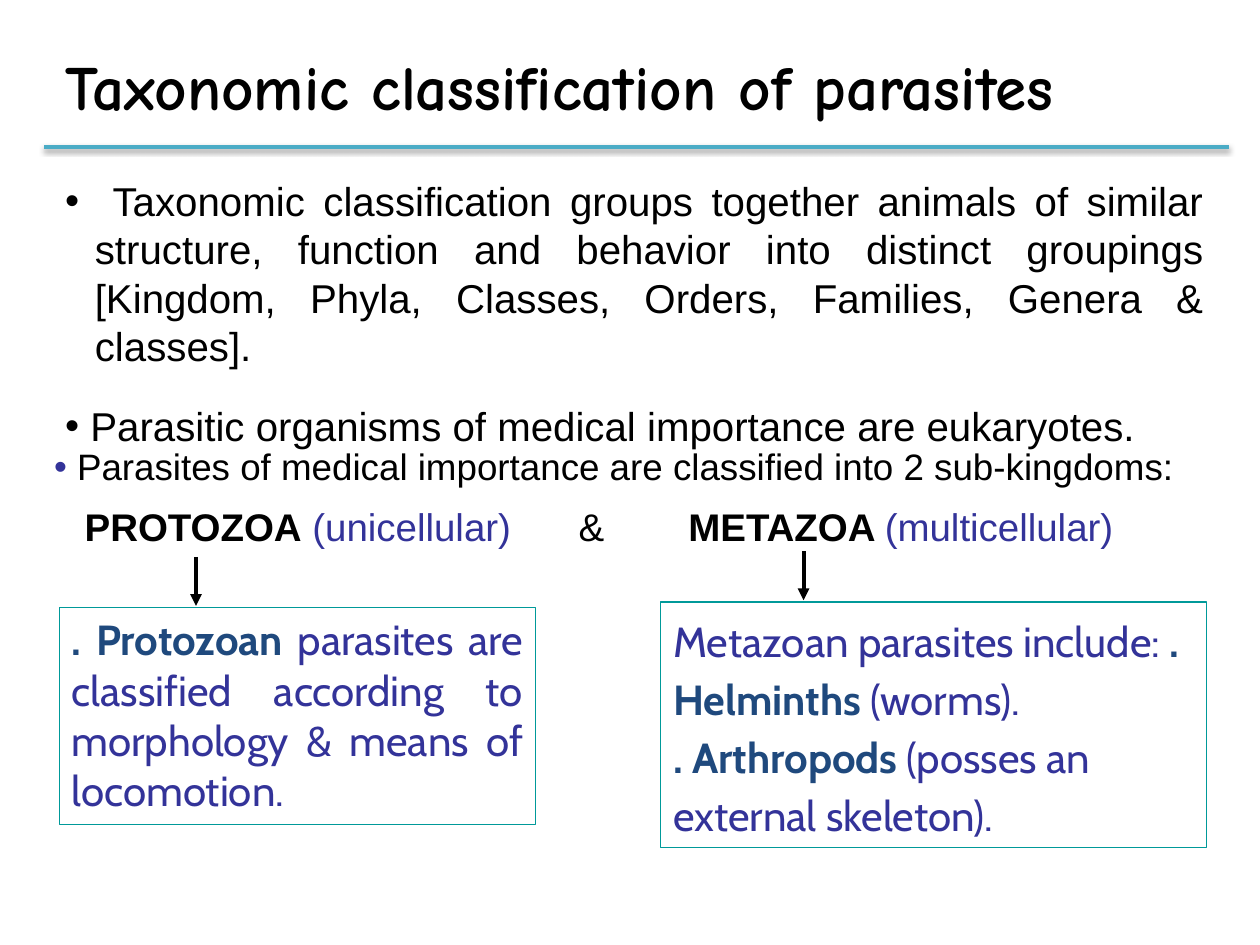
"""Build the slide on the taxonomic classification of parasites."""
import dataclasses
import typing

import pptx
import pptx.dml.color
import pptx.enum.shapes
import pptx.enum.text
import pptx.oxml
import pptx.oxml.ns
import pptx.util

Pt = pptx.util.Pt
RGBColor = pptx.dml.color.RGBColor
Align = pptx.enum.text.PP_ALIGN

BLACK = RGBColor(0x00, 0x00, 0x00)
INDIGO = RGBColor(0x33, 0x33, 0x99)
NAVY = RGBColor(0x1F, 0x49, 0x7D)
TEAL = RGBColor(0x00, 0x99, 0x99)
SKY = RGBColor(0x4B, 0xAC, 0xC6)
NAMESPACE = pptx.oxml.ns.nsdecls("a")


class Run(typing.NamedTuple):
    text: str
    color: RGBColor = BLACK
    bold: bool = False


class Heading(typing.NamedTuple):
    left: float
    width: float
    runs: list[Run]


@dataclasses.dataclass
class Branch:
    left: float
    top: float
    width: float
    height: float
    arrow_x: float
    paragraphs: list[list[Run]]
    alignment: Align
    line_spacing: float


HEADINGS = [
    Heading(41.3, 270, [Run("PROTOZOA", bold=True), Run(" (unicellular)", INDIGO)]),
    Heading(323.5, 40, [Run("&")]),
    Heading(386.3, 270, [Run("METAZOA ", bold=True), Run("(multicellular)", INDIGO)]),
]

BRANCHES = [
    Branch(33.84, 347.2, 272.16, 123.84, 112, [[
        Run(". Protozoan ", NAVY, True),
        Run("parasites are classified according to morphology & means of locomotion.", INDIGO),
    ]], Align.JUSTIFY, 1),
    Branch(377.6, 344, 311.75, 140.4, 459.2, [
        [Run("Metazoan parasites include: ", INDIGO), Run(". Helminths ", NAVY, True),
         Run("(worms).", INDIGO)],
        [Run(". Arthropods ", NAVY, True), Run("(posses an external skeleton).", INDIGO)],
    ], Align.LEFT, 1.15),
]


def add_xml(parent, markup: str) -> None:
    tag, rest = markup.split(maxsplit=1)
    parent.append(pptx.oxml.parse_xml(f"{tag} {NAMESPACE} {rest}"))


def prepare_frame(shape) -> typing.Any:
    frame = shape.text_frame
    frame.word_wrap = True
    frame.auto_size = pptx.enum.text.MSO_AUTO_SIZE.NONE
    frame.vertical_anchor = pptx.enum.text.MSO_ANCHOR.TOP
    return frame


def write_paragraph(frame, runs: list[Run], *, size: float, font: str = "Arial",
                    alignment: Align = Align.LEFT, line_spacing: float = 1,
                    space_after: float = 0, bullet_color: RGBColor | None = None,
                    hanging: float = 0) -> None:
    last = frame.paragraphs[-1]
    paragraph = frame.add_paragraph() if last.runs else last
    paragraph.alignment = alignment
    paragraph.line_spacing = line_spacing
    paragraph.space_before = Pt(0)
    paragraph.space_after = Pt(space_after)
    properties = paragraph._p.get_or_add_pPr()
    properties.set("marL", str(Pt(hanging)))
    properties.set("indent", str(-Pt(hanging)))
    if bullet_color is not None:
        add_xml(properties, f'<a:buClr ><a:srgbClr val="{bullet_color}"/></a:buClr>')
        add_xml(properties, '<a:buFont typeface="Arial"/>')
        add_xml(properties, '<a:buChar char="•"/>')
    for text, color, bold in runs:
        run = paragraph.add_run()
        run.text = text
        run.font.name = font
        run.font.size = Pt(size)
        run.font.bold = bold
        run.font.color.rgb = color


def place(shape, left: float, top: float, width: float, height: float) -> None:
    shape.left, shape.top, shape.width, shape.height = map(Pt, (left, top, width, height))


def add_text_frame(slide, left: float, top: float, width: float, height: float) -> typing.Any:
    return prepare_frame(slide.shapes.add_textbox(*map(Pt, (left, top, width, height))))


def add_line(shapes, start: tuple[float, float], end: tuple[float, float],
             color: RGBColor, width: float) -> typing.Any:
    connector = shapes.add_connector(
        pptx.enum.shapes.MSO_CONNECTOR.STRAIGHT, *map(Pt, (*start, *end)))
    connector.line.color.rgb = color
    connector.line.width = Pt(width)
    return connector


def add_title_rule(slide) -> None:
    rule = add_line(slide.shapes, (25.2, 84), (702, 84), SKY, 2)
    add_xml(rule._element.spPr, (
        f'<a:effectLst ><a:outerShdw blurRad="{Pt(3.1)}" dist="{Pt(1.6)}" dir="5400000" '
        'rotWithShape="0"><a:srgbClr val="000000"><a:alpha val="38000"/></a:srgbClr>'
        "</a:outerShdw></a:effectLst>"))


def add_branch(slide, branch: Branch) -> None:
    shapes = slide.shapes.add_group_shape().shapes
    box = shapes.add_shape(
        pptx.enum.shapes.MSO_SHAPE.RECTANGLE,
        *map(Pt, (branch.left, branch.top, branch.width, branch.height)))
    box.shadow.inherit = False
    box.fill.background()
    box.line.color.rgb = TEAL
    box.line.width = Pt(0.75)
    frame = prepare_frame(box)
    for runs in branch.paragraphs:
        write_paragraph(frame, runs, size=24, font="Cabin", alignment=branch.alignment,
                        line_spacing=branch.line_spacing)
    arrow = add_line(shapes, (branch.arrow_x, branch.top - 29),
                     (branch.arrow_x, branch.top - 1), BLACK, 2.25)
    add_xml(arrow.line._get_or_add_ln(), '<a:tailEnd type="triangle"/>')
    add_xml(arrow._element.spPr, "<a:effectLst />")


def main() -> None:
    presentation = pptx.Presentation()
    presentation.slide_width, presentation.slide_height = Pt(720), Pt(540)
    slide = presentation.slides.add_slide(presentation.slide_layouts[1])
    title, body = slide.placeholders

    place(title, 30, 30.2, 671.8, 44.6)
    write_paragraph(prepare_frame(title), [Run("Taxonomic classification of parasites", bold=True)],
                    size=36, font="Comic Neue", line_spacing=0.85)
    add_title_rule(slide)

    place(body, 30, 97.2, 666, 136.8)
    frame = prepare_frame(body)
    write_paragraph(frame, [Run(
        " Taxonomic classification groups together animals of similar structure, function and "
        "behavior into distinct groupings [Kingdom, Phyla, Classes, Orders, Families, Genera "
        "& classes].")], size=23, alignment=Align.JUSTIFY,
        space_after=18, bullet_color=BLACK, hanging=17)
    write_paragraph(frame, [Run(" Parasitic organisms of medical importance are eukaryotes.")],
                    size=23, alignment=Align.JUSTIFY, bullet_color=BLACK)

    write_paragraph(add_text_frame(slide, 23.8, 252, 686.2, 32), [
        Run(" ", INDIGO),
        Run("Parasites of medical importance are classified into 2 sub-kingdoms:"),
    ], size=21, alignment=Align.JUSTIFY, line_spacing=0.95, bullet_color=INDIGO)
    for heading in HEADINGS:
        write_paragraph(add_text_frame(slide, heading.left, 286, heading.width, 32),
                        heading.runs, size=22, line_spacing=0.95)

    for branch in BRANCHES:
        add_branch(slide, branch)
    presentation.save("out.pptx")


if __name__ == "__main__":
    main()
